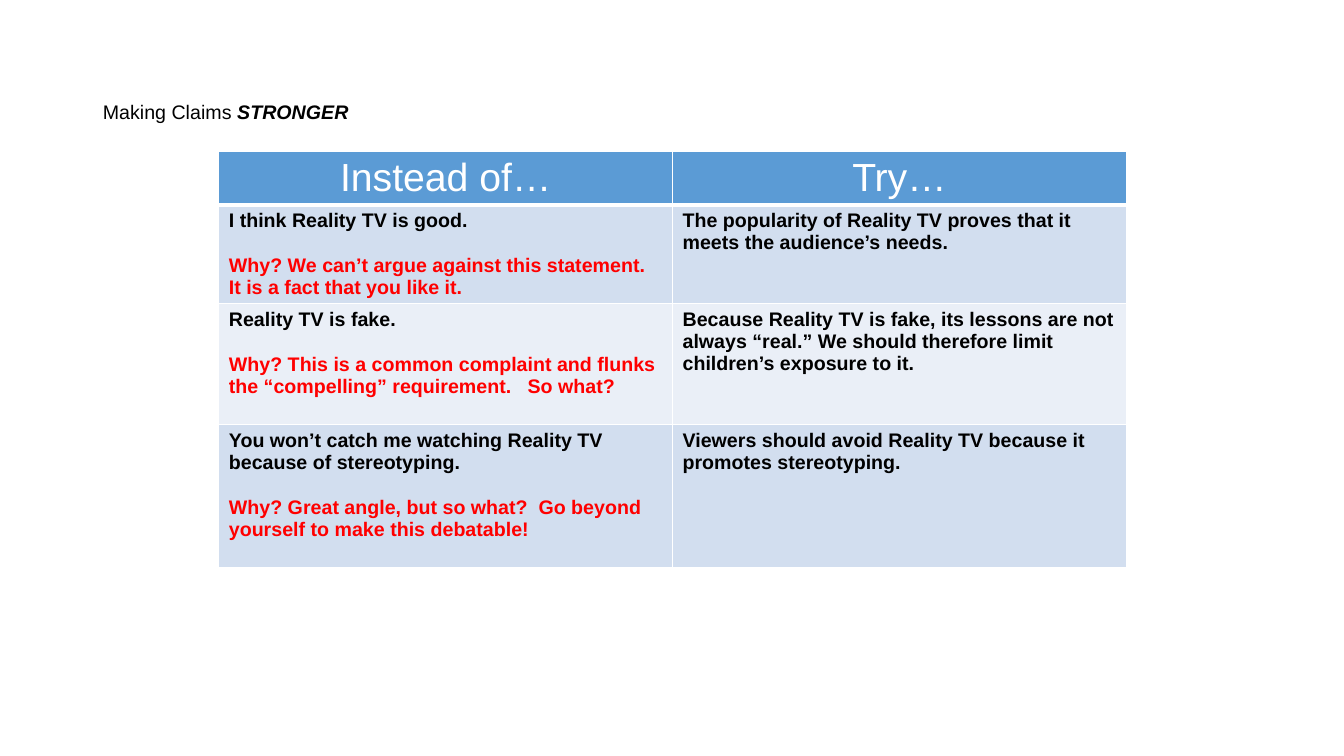
from dataclasses import dataclass

from lxml import etree
from pptx import Presentation
from pptx.dml.color import RGBColor
from pptx.enum.text import MSO_ANCHOR, MSO_AUTO_SIZE, PP_ALIGN
from pptx.oxml.ns import qn
from pptx.slide import Slide
from pptx.table import _Cell
from pptx.text.text import _Paragraph
from pptx.util import Inches, Pt

LEFT, CENTER = PP_ALIGN.LEFT, PP_ALIGN.CENTER
MIDDLE = MSO_ANCHOR.MIDDLE
NO_AUTOFIT = MSO_AUTO_SIZE.NONE
TITLE_ONLY = 5

SLIDE_WIDTH, SLIDE_HEIGHT = 13.33, 7.5
FONT = "Arial"
BODY_SIZE, HEADER_SIZE = 14, 28
REASON_GAP = 16
BLACK, WHITE, RED = "000000", "FFFFFF", "FF0000"
HEADER_FILL = "5B9BD5"
BAND_FILLS = ("D2DEEF", "EAEFF7")

TABLE_LEFT, TABLE_TOP = 2.17, 1.5
COLUMN_WIDTH = 4.5
HEADER_HEIGHT = 0.53
LINE_HEIGHT, ROW_PADDING = 0.22, 0.1


@dataclass(frozen=True)
class Claim:
    weak: str
    reason: str
    strong: str
    lines: int


HEADINGS = ("Instead of…", "Try…")
CLAIMS = (
    Claim(
        "I think Reality TV is good.",
        "Why? We can’t argue against this statement.  It is a fact that you like it.",
        "The popularity of Reality TV proves that it meets the audience’s needs.",
        4,
    ),
    Claim(
        "Reality TV is fake.",
        "Why? This is a common complaint and flunks the “compelling” requirement.   So what?",
        "Because Reality TV is fake, its lessons are not always “real.” "
        "We should therefore limit children’s exposure to it.",
        5,
    ),
    Claim(
        "You won’t catch me watching Reality TV because of stereotyping.",
        "Why? Great angle, but so what?  Go beyond yourself to make this debatable!",
        "Viewers should avoid Reality TV because it promotes stereotyping.",
        6,
    ),
)


def rgb(color: str) -> RGBColor:
    return RGBColor.from_string(color)


def add_run(paragraph: _Paragraph, text: str, color: str = BLACK, size: int = BODY_SIZE,
            bold: bool = False, italic: bool = False) -> None:
    run = paragraph.add_run()
    run.text = text
    run.font.name = FONT
    run.font.size = Pt(size)
    run.font.bold = bold
    run.font.italic = italic
    run.font.color.rgb = rgb(color)


def style_cell(cell: _Cell, fill: str, bottom_width: int = 1, top_width: int = 1) -> None:
    """Give the cell white borders, in points, and then its fill."""
    properties = cell._tc.get_or_add_tcPr()
    widths = {"a:lnL": 1, "a:lnR": 1, "a:lnT": top_width, "a:lnB": bottom_width}
    for tag, width in widths.items():
        border = etree.SubElement(properties, qn(tag), w=str(Pt(width)))
        border_fill = etree.SubElement(border, qn("a:solidFill"))
        etree.SubElement(border_fill, qn("a:srgbClr"), val=WHITE)
    cell.fill.solid()
    cell.fill.fore_color.rgb = rgb(fill)


def add_title(slide: Slide) -> None:
    title = slide.shapes.title
    title.left, title.top = Inches(0.92), Inches(0.4)
    title.width, title.height = Inches(11.5), Inches(1.45)
    frame = title.text_frame
    frame.auto_size = NO_AUTOFIT
    frame.word_wrap = True
    frame.vertical_anchor = MIDDLE
    frame.margin_left = frame.margin_right = Inches(0.1)
    frame.margin_top = frame.margin_bottom = Inches(0.1)
    paragraph = frame.paragraphs[0]
    paragraph.alignment = LEFT
    paragraph.line_spacing = 0.9
    add_run(paragraph, "Making Claims ")
    add_run(paragraph, "STRONGER", bold=True, italic=True)


def add_claims_table(slide: Slide) -> None:
    heights = [HEADER_HEIGHT] + [claim.lines * LINE_HEIGHT + ROW_PADDING for claim in CLAIMS]
    table = slide.shapes.add_table(
        len(heights), len(HEADINGS), Inches(TABLE_LEFT), Inches(TABLE_TOP),
        Inches(COLUMN_WIDTH * len(HEADINGS)), Inches(sum(heights)),
    ).table
    for row, height in zip(table.rows, heights):
        row.height = Inches(height)

    for column, heading in enumerate(HEADINGS):
        cell = table.cell(0, column)
        style_cell(cell, HEADER_FILL, bottom_width=3)
        paragraph = cell.text_frame.paragraphs[0]
        paragraph.alignment = CENTER
        add_run(paragraph, heading, WHITE, HEADER_SIZE)

    for index, claim in enumerate(CLAIMS):
        weak_cell, strong_cell = table.rows[index + 1].cells
        for cell, statement in ((weak_cell, claim.weak), (strong_cell, claim.strong)):
            style_cell(cell, BAND_FILLS[index % len(BAND_FILLS)],
                       top_width=3 if index == 0 else 1)
            add_run(cell.text_frame.paragraphs[0], statement, bold=True)
        reason = weak_cell.text_frame.add_paragraph()
        reason.space_before = Pt(REASON_GAP)
        add_run(reason, claim.reason, RED, bold=True)


def main() -> None:
    presentation = Presentation()
    presentation.slide_width = Inches(SLIDE_WIDTH)
    presentation.slide_height = Inches(SLIDE_HEIGHT)
    slide = presentation.slides.add_slide(presentation.slide_layouts[TITLE_ONLY])
    add_title(slide)
    add_claims_table(slide)
    presentation.save("out.pptx")


if __name__ == "__main__":
    main()
